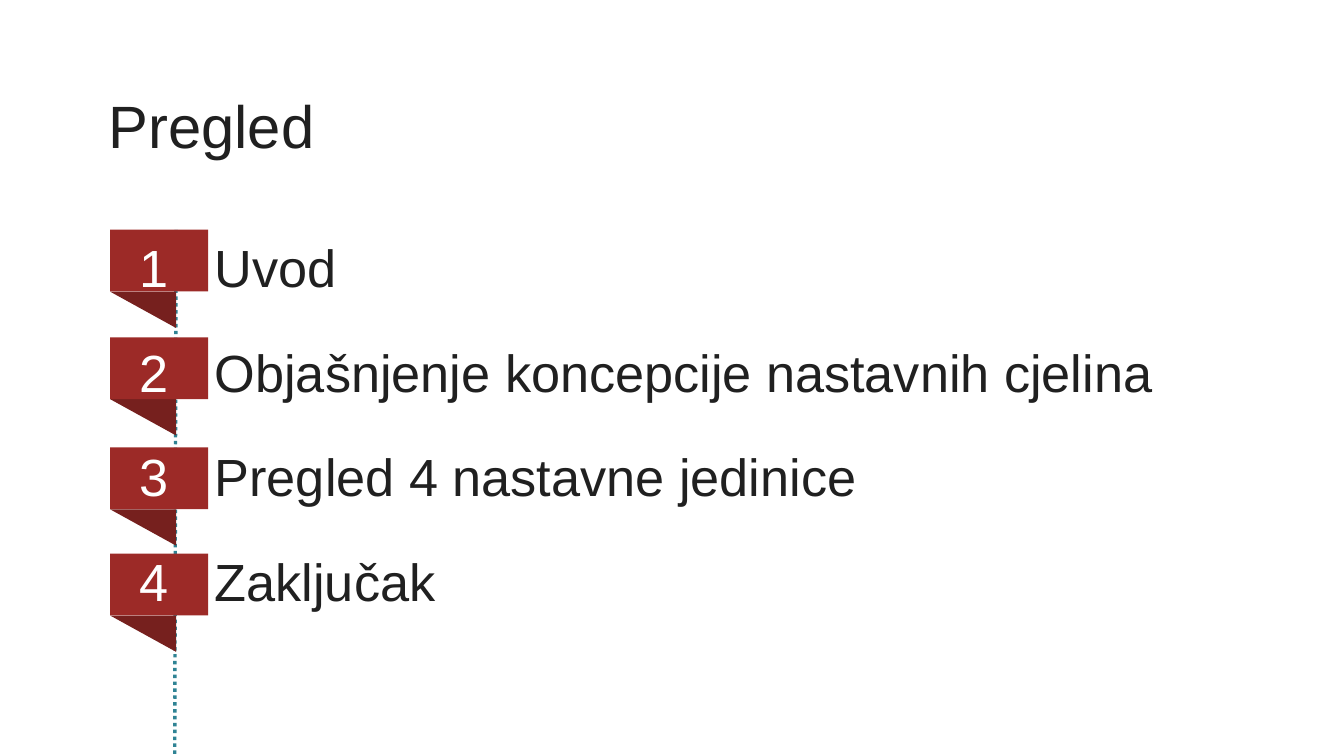
from lxml import etree
from pptx import Presentation
from pptx.dml.color import RGBColor
from pptx.enum import dml, shapes
from pptx.oxml import ns
from pptx.util import Inches, Pt

RED = RGBColor(0x9C, 0x2A, 0x27)
DARK_RED = RGBColor(0x76, 0x20, 0x1E)
TEAL = RGBColor(0x2F, 0x83, 0x94)
INK = RGBColor(0x20, 0x20, 0x20)

TOPICS = ["Uvod", "Objašnjenje koncepcije nastavnih cjelina",
          "Pregled 4 nastavne jedinice", "Zaključak"]
RIBBON_TOPS = [1.71, 2.51, 3.33, 4.12]


def set_attrs(obj, values):
    """Set every named attribute of an object."""
    for name, value in values.items():
        setattr(obj, name, value)


def add_number(p):
    """Give a paragraph a hanging white automatic number."""
    pPr = p._p.get_or_add_pPr()
    pPr.set("marL", str(Inches(0.56)))
    pPr.set("indent", str(-Inches(0.56)))
    color = etree.SubElement(pPr, ns.qn("a:buClr"))
    etree.SubElement(color, ns.qn("a:srgbClr"), val="FFFFFF")
    etree.SubElement(pPr, ns.qn("a:buFont"), typeface="Arial")
    etree.SubElement(pPr, ns.qn("a:buAutoNum"), type="arabicPlain")


def add_text(s, x, y, w, h, lines, size, numbered=False):
    """Place a text box with one paragraph for each line."""
    tf = s.shapes.add_textbox(Inches(x), Inches(y), Inches(w), Inches(h)).text_frame
    tf.word_wrap = True
    for i, line in enumerate(lines):
        p = tf.paragraphs[0] if i == 0 else tf.add_paragraph()
        if numbered:
            add_number(p)
            p.line_spacing = 1.5
        if i:
            p.space_before = Pt(size * 0.2)
        r = p.add_run()
        r.text = line
        set_attrs(r.font, {"name": "Arial", "size": Pt(size)})
        r.font.color.rgb = INK


def add_ribbon(s, x, y, w, h):
    """Place a number ribbon with its folded tail in the given box."""
    group = s.shapes.add_group_shape()
    face = 0.46
    parts = [(shapes.MSO_SHAPE.RIGHT_TRIANGLE, y + face, 0.49, h - face, 180, DARK_RED),
             (shapes.MSO_SHAPE.RECTANGLE, y, w, face, 0, RED)]
    for kind, top, width, height, angle, color in parts:
        sp = group.shapes.add_shape(kind, Inches(x), Inches(top),
                                    Inches(width), Inches(height))
        sp.rotation = angle
        sp.shadow.inherit = False
        sp.fill.solid()
        sp.fill.fore_color.rgb = color
        sp.line.fill.background()


def add_thread(s, x, y, h):
    """Place the dotted line that runs behind the ribbons."""
    line = s.shapes.add_connector(shapes.MSO_CONNECTOR.STRAIGHT, Inches(x),
                                  Inches(y + h), Inches(x + 0.01), Inches(y))
    set_attrs(line.line, {"width": Pt(1.85),
                          "dash_style": dml.MSO_LINE.ROUND_DOT})
    line.line.color.rgb = TEAL
    etree.SubElement(line._element.spPr, ns.qn("a:effectLst"))


def build_overview(s):
    """Lay out the title, ribbons and numbered topics."""
    add_thread(s, 1.3, 1.71, 3.95)
    add_text(s, 0.71, 0.61, 7.86, 0.62, ["Pregled"], 32)
    for top in RIBBON_TOPS:
        add_ribbon(s, 0.82, top, 0.73, 0.73)
    add_text(s, 0.94, 1.47, 8.67, 3.86, TOPICS, 28, numbered=True)


def main():
    """Build and save the presentation."""
    prs = Presentation()
    width = Inches(10)
    set_attrs(prs, {"slide_width": width, "slide_height": width * 9 // 16})
    build_overview(prs.slides.add_slide(prs.slide_layouts[6]))
    prs.save("out.pptx")


if __name__ == "__main__":
    main()
